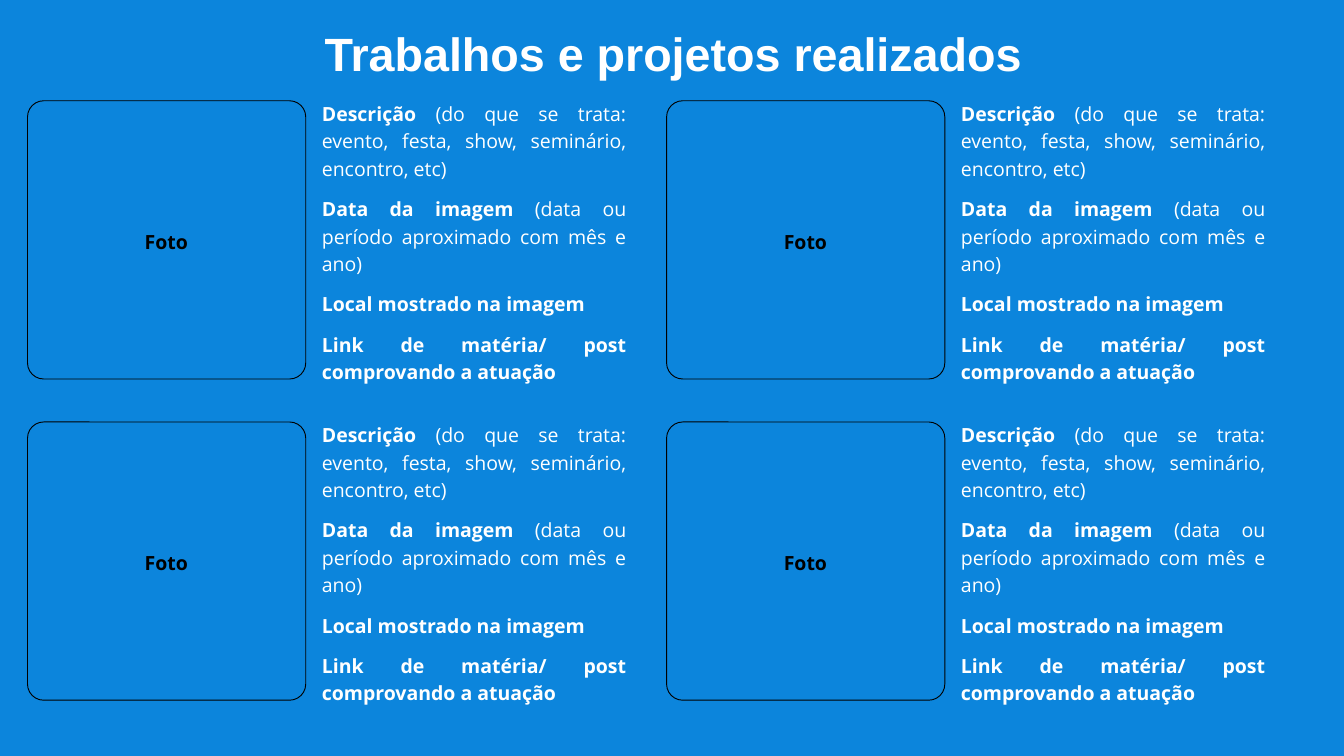
from dataclasses import dataclass

from pptx import Presentation
from pptx.dml.color import RGBColor
from pptx.enum.shapes import MSO_SHAPE
from pptx.enum.text import MSO_ANCHOR, MSO_AUTO_SIZE, PP_ALIGN
from pptx.util import Inches, Pt

ROUNDED = MSO_SHAPE.ROUNDED_RECTANGLE
TOP = MSO_ANCHOR.TOP
NO_AUTOFIT = MSO_AUTO_SIZE.NONE
CENTER = PP_ALIGN.CENTER
JUSTIFY = PP_ALIGN.JUSTIFY


@dataclass(frozen=True)
class Theme:
    background: RGBColor = RGBColor(0x0C, 0x85, 0xDC)
    light: RGBColor = RGBColor(0xFF, 0xFF, 0xFF)
    dark: RGBColor = RGBColor(0, 0, 0)
    title_font: str = "Arial"
    body_font: str = "Open Sans"
    title_size: float = 50
    title_leading: float = 70
    body_size: float = 20.9
    body_leading: float = 29.3
    paragraph_gap: float = 14


THEME = Theme()
COLUMN_LEFTS = (0.41, 9.92)
ROW_TOPS = (1.5, 6.28)
PHOTO_SIDE = 4.14
CORNER_RADIUS = 0.24

DETAILS = (
    (("Descrição ", True),
     ("(do que se trata: evento, festa, show, seminário, encontro, etc)", False)),
    (("Data da imagem", True),
     (" (data ou período aproximado com mês e ano)", False)),
    (("Local mostrado na imagem", True),),
    (("Link de matéria/ post comprovando a atuação", True),),
)


def prepare_frame(box):
    frame = box.text_frame
    frame.margin_left = frame.margin_right = 0
    frame.margin_top = frame.margin_bottom = 0
    frame.word_wrap = True
    frame.auto_size = NO_AUTOFIT
    frame.vertical_anchor = TOP
    return frame


def format_paragraph(para, align, leading, gap=0):
    para.alignment = align
    para.line_spacing = Pt(leading)
    para.space_before = Pt(gap)
    para.space_after = Pt(0)


def add_span(para, text, font, size, color, bold):
    span = para.add_run()
    span.text = text
    span.font.name = font
    span.font.size = Pt(size)
    span.font.color.rgb = color
    span.font.bold = bold


def set_title(page, text):
    box = page.shapes.title
    box.left, box.top = Inches(0.41), Inches(0.23)
    box.width, box.height = Inches(19.23), Inches(0.93)
    para = prepare_frame(box).paragraphs[0]
    format_paragraph(para, CENTER, THEME.title_leading)
    add_span(para, text, THEME.title_font, THEME.title_size, THEME.light, True)


def add_text(page, left, top, width, height, paragraphs, align, color):
    box = page.shapes.add_textbox(
        Inches(left), Inches(top), Inches(width), Inches(height))
    frame = prepare_frame(box)
    for index, spans in enumerate(paragraphs):
        para = frame.add_paragraph() if index else frame.paragraphs[0]
        gap = THEME.paragraph_gap if index else 0
        format_paragraph(para, align, THEME.body_leading, gap)
        for text, bold in spans:
            add_span(para, text, THEME.body_font, THEME.body_size, color, bold)


def add_photo_frame(page, left, top):
    frame = page.shapes.add_shape(
        ROUNDED, Inches(left), Inches(top), Inches(PHOTO_SIDE), Inches(PHOTO_SIDE))
    frame.adjustments[0] = CORNER_RADIUS / PHOTO_SIDE
    frame.shadow.inherit = False
    frame.fill.background()
    frame.line.color.rgb = THEME.dark
    frame.line.width = Pt(1)


def add_project(page, left, top):
    add_photo_frame(page, left, top)
    add_text(page, left + 1.27, top + 1.86, 1.59, 0.39,
             ((("Foto", True),),), CENTER, THEME.dark)
    add_text(page, left + 4.38, top - 0.04, 4.53, 4.2,
             DETAILS, JUSTIFY, THEME.light)


def main():
    deck = Presentation()
    deck.slide_width, deck.slide_height = Inches(20), Inches(11.25)
    page = deck.slides.add_slide(deck.slide_layouts.get_by_name("Title Only"))
    page.background.fill.solid()
    page.background.fill.fore_color.rgb = THEME.background
    set_title(page, "Trabalhos e projetos realizados")
    for left in COLUMN_LEFTS:
        for top in ROW_TOPS:
            add_project(page, left, top)
    deck.save("out.pptx")


if __name__ == "__main__":
    main()
